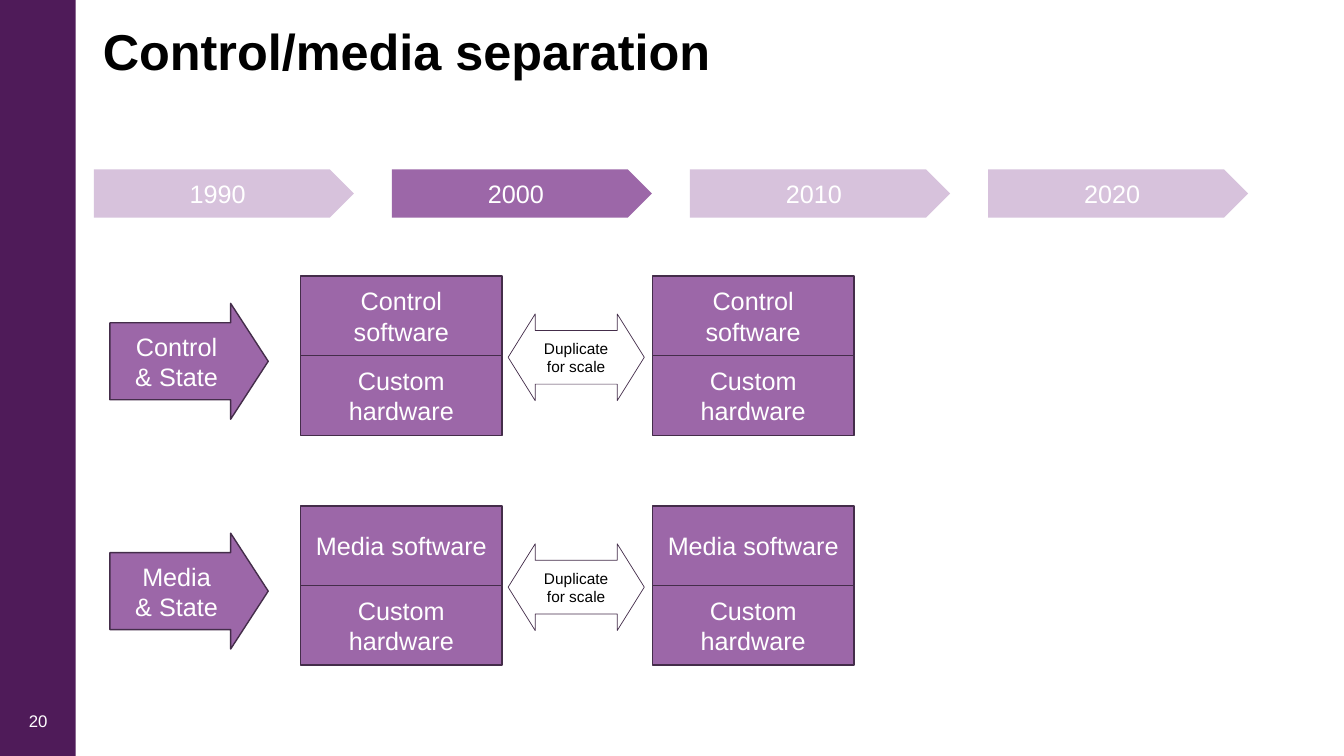
import dataclasses
import typing

import pptx
import pptx.dml.color
import pptx.enum.shapes
import pptx.enum.text
import pptx.util

Kind = pptx.enum.shapes.MSO_SHAPE
Align = pptx.enum.text.PP_ALIGN
Anchor = pptx.enum.text.MSO_ANCHOR

FONT = "Arial"
HUES = {
    "bar": "4F1B59",
    "main": "9C67A8",
    "pale": "D7C2DC",
    "edge": "442D4A",
    "white": "FFFFFF",
    "black": "000000",
}

# The slide is a grid of 100 columns by 100 rows
WIDE, HIGH = pptx.util.Inches(13.33), pptx.util.Inches(7.5)
DATE_STEP = 22.18
BLOCK_STEP = 26.18
LANE_TOP, LANE_STEP = 36.53, 30.4
TIER_HIGH = 10.53


@dataclasses.dataclass
class Area:
    col: float
    row: float
    cols: float
    rows: float

    def box(self) -> tuple[int, int, int, int]:
        return (int(self.col * WIDE / 100), int(self.row * HIGH / 100),
                int(self.cols * WIDE / 100), int(self.rows * HIGH / 100))


@dataclasses.dataclass
class Style:
    kind: Kind
    fill: typing.Optional[str] = "main"
    line: float = 0
    size: float = 18
    ink: str = "white"
    adjust: tuple[float, ...] = ()
    tight: bool = False


@dataclasses.dataclass
class Lane:
    name: str
    tiers: tuple[str, ...]


BAR = Style(Kind.RECTANGLE, "bar")
TIER = Style(Kind.RECTANGLE, line=1)
LABEL = Style(Kind.RIGHT_ARROW, line=1, adjust=(0.664, 0.324))
SCALE = Style(Kind.LEFT_RIGHT_ARROW, None, 0.5, 11, "black", (0.619, 0.312), True)
PLATES = {hue: Style(Kind.PENTAGON, hue) for hue in ("main", "pale")}

DATES = {"1990": "pale", "2000": "main", "2010": "pale", "2020": "pale"}
LANES = [
    Lane("Control\n& State", ("Control software", "Custom hardware")),
    Lane("Media\n& State", ("Media software", "Custom hardware")),
]


def tint(name: str) -> pptx.dml.color.RGBColor:
    return pptx.dml.color.RGBColor.from_string(HUES[name])


def write(frame: typing.Any, text: str, size: float, ink: str, align: Align) -> None:
    frame.text = text
    frame.word_wrap = True
    frame.vertical_anchor = Anchor.MIDDLE
    for para in frame.paragraphs:
        para.alignment = align
        para.font.name = FONT
        para.font.size = pptx.util.Pt(size)
        para.font.color.rgb = tint(ink)


def draw(shapes: typing.Any, area: Area, style: Style, text: str = "") -> None:
    shape = shapes.add_shape(style.kind, *area.box())
    shape.shadow.inherit = False
    for index, value in enumerate(style.adjust):
        shape.adjustments[index] = value
    if style.fill:
        shape.fill.solid()
        shape.fill.fore_color.rgb = tint(style.fill)
    else:
        shape.fill.background()
    if style.line:
        shape.line.color.rgb = tint("edge")
        shape.line.width = pptx.util.Pt(style.line)
    else:
        shape.line.fill.background()
    frame = shape.text_frame
    if style.tight:
        frame.margin_left = frame.margin_right = 0
        frame.margin_top = frame.margin_bottom = 0
    if text:
        write(frame, text, style.size, style.ink, Align.CENTER)


def main() -> None:
    deck = pptx.Presentation()
    deck.slide_width, deck.slide_height = WIDE, HIGH
    slide = deck.slides.add_slide(deck.slide_layouts[5])
    shapes = slide.shapes

    # Side bar and title
    draw(shapes, Area(0, 0, 5.63, 100), BAR)
    title = shapes.title
    title.left, title.top, title.width, title.height = Area(6.9, 2.67, 91.37, 9.07).box()
    write(title.text_frame, "Control/media separation", 36, "black", Align.LEFT)
    head = title.text_frame.paragraphs[0]
    head.font.bold = True
    head.line_spacing = 0.9

    # Timeline
    for index, (year, hue) in enumerate(DATES.items()):
        draw(shapes, Area(6.98 + index * DATE_STEP, 22.4, 19.35, 6.4), PLATES[hue], year)

    # Lanes: label, two stacks of tiers, and the arrow between them
    for index, lane in enumerate(LANES):
        top = LANE_TOP + index * LANE_STEP
        draw(shapes, Area(8.18, top + 3.6, 11.78, 15.33), LABEL, lane.name)
        for side in range(2):
            stack = shapes.add_group_shape().shapes
            for level, tier in enumerate(lane.tiers):
                area = Area(22.36 + side * BLOCK_STEP, top + level * TIER_HIGH, 15, TIER_HIGH)
                draw(stack, area, TIER, tier)
        draw(shapes, Area(37.81, top + 5.0, 10.13, 11.47), SCALE, "Duplicate\nfor scale")

    # Slide number
    number = shapes.add_textbox(*Area(0.9, 92.67, 3.38, 5.33).box())
    write(number.text_frame, "20", 12, "white", Align.RIGHT)

    deck.save("out.pptx")


if __name__ == "__main__":
    main()
